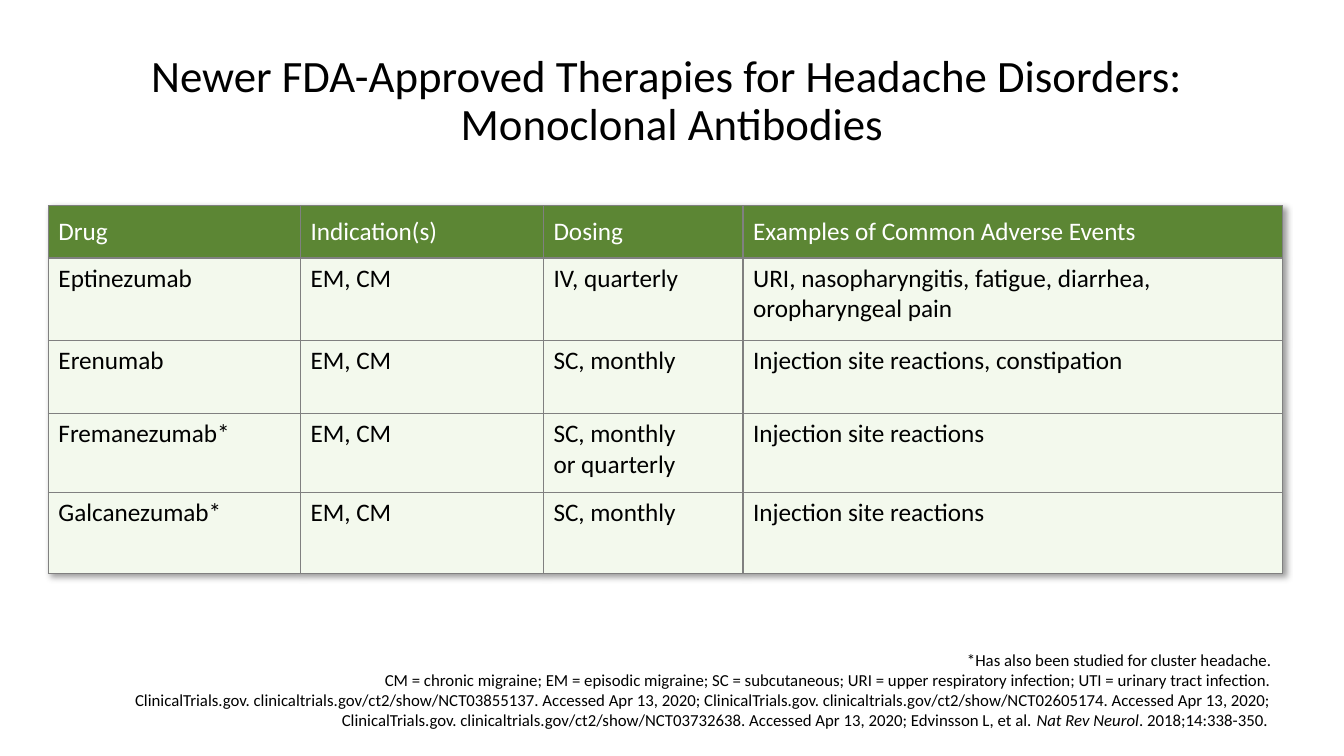
from lxml import etree
from pptx import Presentation
from pptx.dml.color import RGBColor
from pptx.enum.text import MSO_ANCHOR, PP_ALIGN
from pptx.oxml import parse_xml
from pptx.oxml.ns import nsdecls, qn
from pptx.util import Pt

EMU_PER_PX = 9144  # 100 px to the inch
FONT = "Calibri"
BLACK = RGBColor(0x00, 0x00, 0x00)
WHITE = RGBColor(0xFF, 0xFF, 0xFF)
GREEN = RGBColor(0x5C, 0x86, 0x34)
PALE_GREEN = RGBColor(0xF3, 0xF9, 0xED)
GRAY = RGBColor(0x80, 0x80, 0x80)
CENTER, RIGHT = PP_ALIGN.CENTER, PP_ALIGN.RIGHT
TOP, MIDDLE = MSO_ANCHOR.TOP, MSO_ANCHOR.MIDDLE

TITLE = "Newer FDA-Approved Therapies for Headache Disorders: \nMonoclonal Antibodies"
COLUMN_WIDTHS = (250, 241, 198, 535)
ROW_HEIGHTS = (52, 82, 72, 79, 80)
THERAPIES = (
    ("Drug", "Indication(s)", "Dosing", "Examples of Common Adverse Events"),
    ("Eptinezumab", "EM, CM", "IV, quarterly",
     "URI, nasopharyngitis, fatigue, diarrhea, oropharyngeal pain"),
    ("Erenumab", "EM, CM", "SC, monthly", "Injection site reactions, constipation"),
    ("Fremanezumab*", "EM, CM", "SC, monthly \nor quarterly", "Injection site reactions"),
    ("Galcanezumab*", "EM, CM", "SC, monthly", "Injection site reactions"),
)
NOTES = (
    "*Has also been studied for cluster headache.\n"
    "CM = chronic migraine; EM = episodic migraine; SC = subcutaneous; "
    "URI = upper respiratory infection; UTI = urinary tract infection.\n"
    "ClinicalTrials.gov. clinicaltrials.gov/ct2/show/NCT03855137. Accessed Apr 13, 2020; "
    "ClinicalTrials.gov. clinicaltrials.gov/ct2/show/NCT02605174. Accessed Apr 13, 2020; "
    "ClinicalTrials.gov. clinicaltrials.gov/ct2/show/NCT03732638. Accessed Apr 13, 2020; "
    "Edvinsson L, et al. "
)
JOURNAL = "Nat Rev Neurol"
ISSUE = ". 2018;14:338-350. "


def px(*lengths):
    return [length * EMU_PER_PX for length in lengths]


def set_font(paragraph, size, color):
    paragraph.font.name = FONT
    paragraph.font.size = Pt(size)
    paragraph.font.color.rgb = color


def add_text(slide, box, text, size, alignment, anchor):
    """Add a wrapped text box and return its only paragraph."""
    frame = slide.shapes.add_textbox(*px(*box)).text_frame
    frame.word_wrap = True
    frame.vertical_anchor = anchor
    paragraph = frame.paragraphs[0]
    paragraph.text = text
    paragraph.alignment = alignment
    set_font(paragraph, size, BLACK)
    return paragraph


def add_borders(cell):
    properties = cell._tc.get_or_add_tcPr()
    for position, side in enumerate(("lnL", "lnR", "lnT", "lnB")):
        line = etree.Element(qn(f"a:{side}"), w=str(Pt(1)))
        fill = etree.SubElement(line, qn("a:solidFill"))
        etree.SubElement(fill, qn("a:srgbClr"), val=str(GRAY))
        properties.insert(position, line)


def add_table_shadow(table):
    table._tbl.tblPr.insert(0, parse_xml(
        f'<a:effectLst {nsdecls("a")}>'
        '<a:outerShdw blurRad="50800" dist="38100" dir="2700000" algn="tl" rotWithShape="0">'
        '<a:srgbClr val="000000"><a:alpha val="40000"/></a:srgbClr>'
        '</a:outerShdw></a:effectLst>'))


def fill_cell(cell, text, is_header):
    cell.fill.solid()
    cell.fill.fore_color.rgb = GREEN if is_header else PALE_GREEN
    cell.vertical_anchor = MIDDLE if is_header else TOP
    paragraph = cell.text_frame.paragraphs[0]
    paragraph.text = text
    set_font(paragraph, 18, WHITE if is_header else BLACK)
    add_borders(cell)


def add_therapy_table(slide, left, top):
    frame = slide.shapes.add_table(
        len(ROW_HEIGHTS), len(COLUMN_WIDTHS),
        *px(left, top, sum(COLUMN_WIDTHS), sum(ROW_HEIGHTS)))
    table = frame.table
    table.first_row = table.horz_banding = False
    add_table_shadow(table)
    for column, width in zip(table.columns, px(*COLUMN_WIDTHS)):
        column.width = width
    for row, height in zip(table.rows, px(*ROW_HEIGHTS)):
        row.height = height
    for row_index, texts in enumerate(THERAPIES):
        for column_index, text in enumerate(texts):
            fill_cell(table.cell(row_index, column_index), text, row_index == 0)


def main():
    presentation = Presentation()
    presentation.slide_width, presentation.slide_height = px(1333, 750)
    slide = presentation.slides.add_slide(presentation.slide_layouts[6])

    add_therapy_table(slide, 48, 204)
    title = add_text(slide, (86, 48, 1161, 94), TITLE, 32, CENTER, TOP)
    title.line_spacing = 0.9

    notes = add_text(slide, (49, 634, 1222, 101), NOTES, 12, RIGHT, MIDDLE)
    journal = notes.add_run()
    journal.text = JOURNAL
    journal.font.italic = True
    notes.add_run().text = ISSUE

    presentation.save("out.pptx")


if __name__ == "__main__":
    main()
